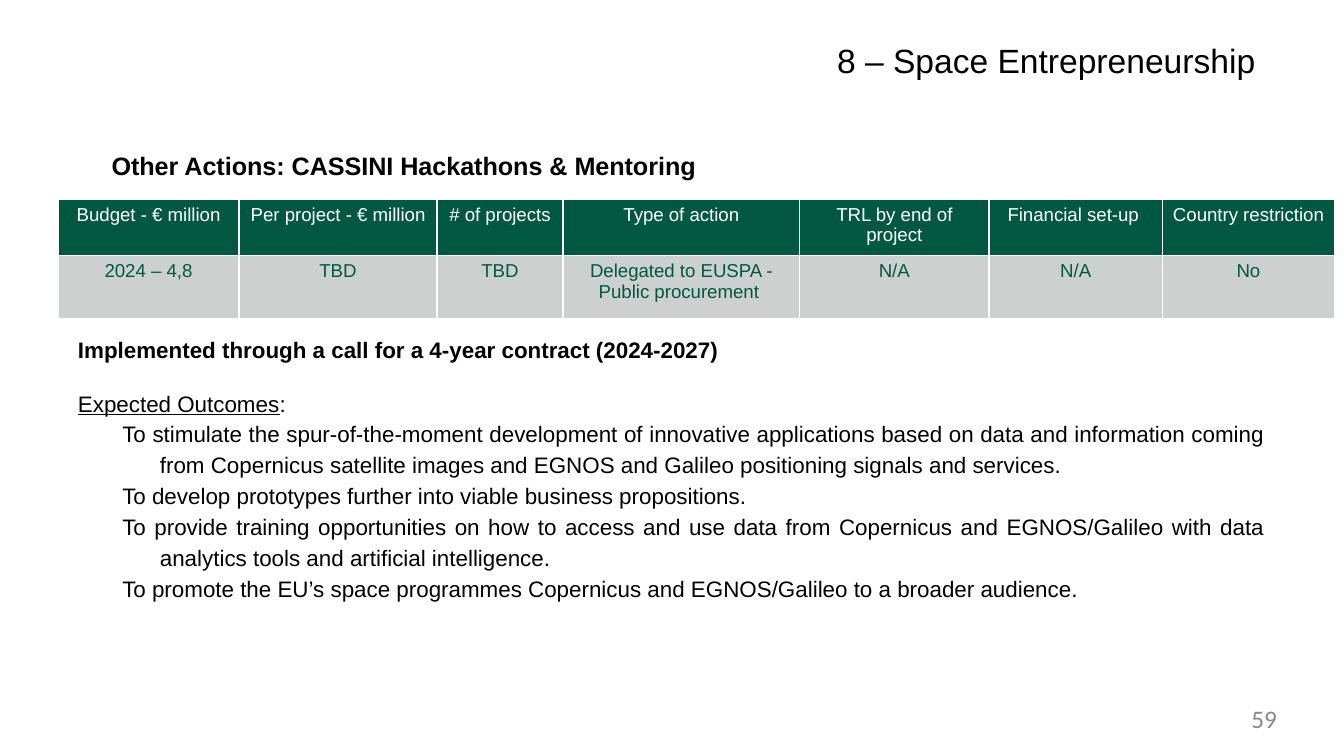
from dataclasses import dataclass
from pptx import Presentation as Deck
from pptx.dml.color import RGBColor as RGB
from pptx.enum.text import PP_ALIGN as Align
from pptx.oxml.ns import qn
from pptx.util import Inches, Pt
from lxml.etree import SubElement as Sub


@dataclass(frozen=True)
class Theme:
    black: str = "000000"
    white: str = "FFFFFF"
    green: str = "005841"
    pale: str = "CCD1CF"
    gray: str = "888888"
    font: str = "Arial"
    title: float = 18
    head: float = 13.5
    body: float = 12
    cell: float = 10


T = Theme()
INSET = dict(margin_left=Inches(0.07), margin_right=Inches(0.07),
             margin_top=Inches(0.04), margin_bottom=Inches(0.04))
FLAT = dict.fromkeys(INSET, 0)

WIDTHS = [1.35, 1.47, 0.94, 1.76, 1.41, 1.29, 1.28]
HEIGHTS = [0.42, 0.47]
ROWS = [
    ["Budget - € million", "Per project - € million", "# of projects",
     "Type of action", "TRL by end of project", "Financial set-up ",
     "Country restriction"],
    ["2024 – 4,8", "TBD", "TBD", "Delegated to EUSPA - Public procurement ",
     "N/A", "N/A", "No"],
]
GOALS = [
    "To stimulate the spur-of-the-moment development of innovative applications "
    "based on data and information coming from Copernicus satellite images and "
    "EGNOS and Galileo positioning signals and services.",
    "To develop prototypes further into viable business propositions.",
    "To provide training opportunities on how to access and use data from "
    "Copernicus and EGNOS/Galileo with data analytics tools and artificial "
    "intelligence.",
    "To promote the EU’s space programmes Copernicus and EGNOS/Galileo to a "
    "broader audience. ",
]


def apply(obj, form):
    for key, val in form.items():
        setattr(obj, key, val)


def add_box(slide, at, **form):
    frame = slide.shapes.add_textbox(*map(Inches, at)).text_frame
    apply(frame, {"word_wrap": True, **form})
    return frame


def add_run(para, text, size, color=T.black, font=T.font, **form):
    run = para.add_run()
    run.text = text
    apply(run.font, {"size": Pt(size), "name": font, **form})
    run.font.color.rgb = RGB.from_string(color)


def add_para(frame, left=0, hang=0, **form):
    first = frame.paragraphs[0]
    para = frame.add_paragraph() if first.runs else first
    apply(para, form)
    props = para._p.get_or_add_pPr()
    props.set("marL", str(Inches(left)))
    props.set("indent", str(Inches(hang)))
    return para


def add_edges(cell):
    props = cell._tc.get_or_add_tcPr()
    for side in ("lnL", "lnR", "lnT", "lnB"):
        line = Sub(props, qn(f"a:{side}"), w=str(Pt(1)))
        Sub(Sub(line, qn("a:solidFill")), qn("a:srgbClr"), val=T.white)


def add_grid(slide):
    at = map(Inches, (0.43, 1.48, sum(WIDTHS), sum(HEIGHTS)))
    table = slide.shapes.add_table(len(ROWS), len(WIDTHS), *at).table
    for col, width in zip(table.columns, WIDTHS):
        col.width = Inches(width)
    looks = [(T.green, T.white), (T.pale, T.green)]
    for row, high, texts, (fill, ink) in zip(table.rows, HEIGHTS, ROWS, looks):
        row.height = Inches(high)
        for cell, text in zip(row.cells, texts):
            apply(cell, INSET)
            add_edges(cell)
            cell.fill.solid()
            cell.fill.fore_color.rgb = RGB.from_string(fill)
            para = cell.text_frame.paragraphs[0]
            para.alignment = Align.CENTER
            add_run(para, text, T.cell, ink, bold=False)


def add_body(slide):
    frame = add_box(slide, (0.51, 1.08, 8.98, 4.09), **INSET)
    para = add_para(frame, 0.5, -0.25)
    add_run(para, "Other Actions: CASSINI Hackathons & Mentoring", T.head, bold=True)
    # The space before this line leaves room for the table
    para = add_para(frame, space_before=Pt(83))
    add_run(para, "Implemented through a call for a 4-year contract (2024-2027)",
            T.body, bold=True)
    para = add_para(frame, space_before=Pt(14.5))
    add_run(para, "Expected Outcomes", T.body, underline=True)
    add_run(para, ":", T.body)
    for goal in GOALS:
        para = add_para(frame, 0.61, -0.28, alignment=Align.JUSTIFY,
                        line_spacing=1.15)
        add_run(para, goal, T.body)


def main():
    deck = Deck()
    # Widescreen, 16 to 9
    deck.slide_width = Inches(10)
    deck.slide_height = Inches(10) * 9 // 16
    slide = deck.slides.add_slide(deck.slide_layouts[6])

    # Heading, text and table
    add_body(slide)
    add_grid(slide)

    # Slide title
    frame = add_box(slide, (6.13, 0.25, 3.34, 0.4), word_wrap=False)
    add_run(add_para(frame), "8 – Space Entrepreneurship", T.title)

    # Page number
    frame = add_box(slide, (7.2, 5.23, 2.3, 0.28), **FLAT)
    add_run(add_para(frame, alignment=Align.RIGHT), "59", T.head, T.gray, "Calibri")

    deck.save("out.pptx")


if __name__ == "__main__":
    main()
